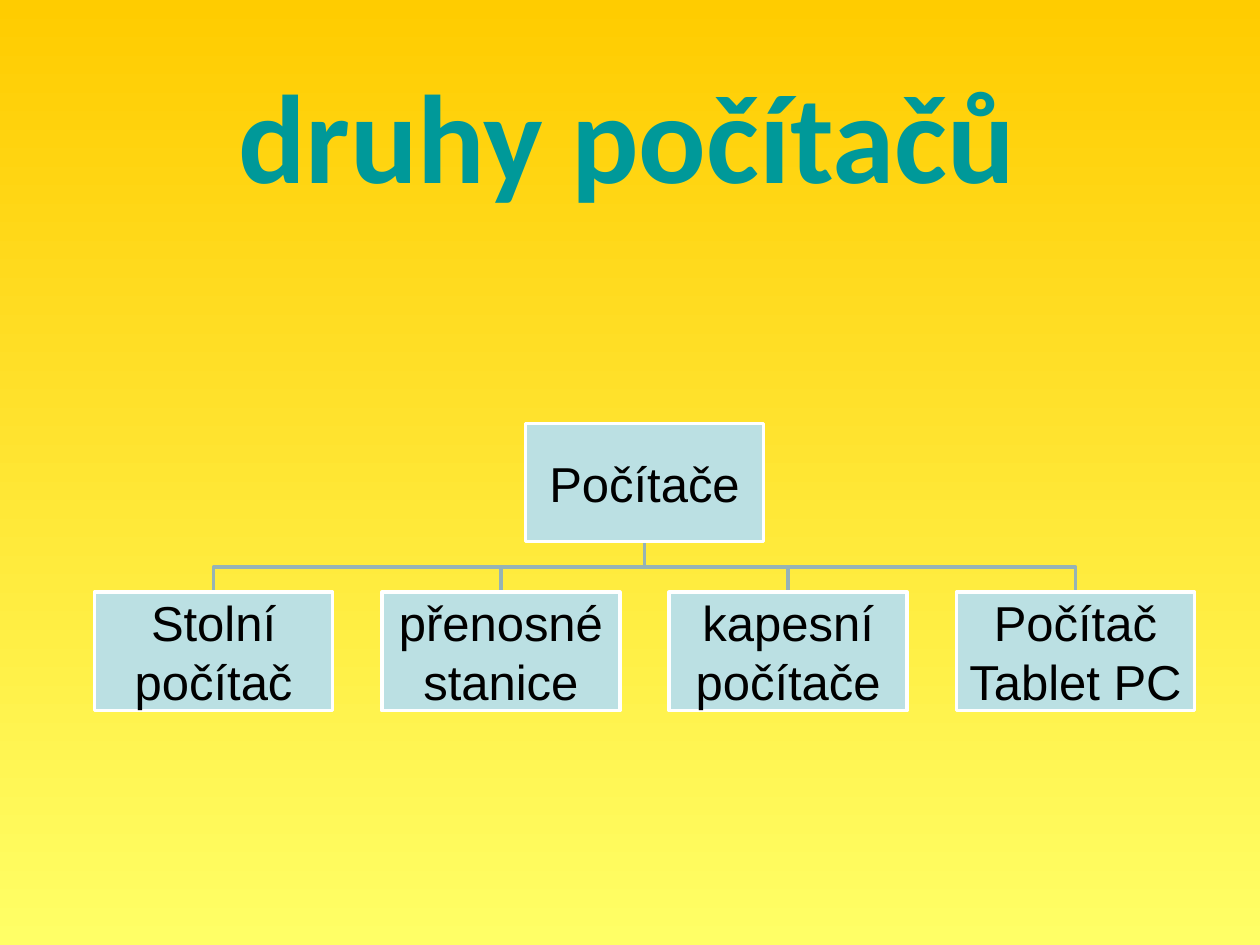
from dataclasses import dataclass

from pptx import Presentation
from pptx.dml.color import RGBColor
from pptx.enum.shapes import MSO_SHAPE
from pptx.enum.text import MSO_ANCHOR, MSO_AUTO_SIZE, PP_ALIGN
from pptx.shapes.autoshape import Shape
from pptx.slide import Slide
from pptx.util import Inches, Pt

RECTANGLE = MSO_SHAPE.RECTANGLE
TOP, MIDDLE = MSO_ANCHOR.TOP, MSO_ANCHOR.MIDDLE
CENTER = PP_ALIGN.CENTER
NO_AUTOFIT = MSO_AUTO_SIZE.NONE

COLORS = {
    "background top": "FFCC00",
    "background bottom": "FFFF66",
    "title": "009999",
    "box": "BBE0E3",
    "box border": "FFFFFF",
    "branch": "96B3B6",
    "text": "000000",
}
BOX_WIDTH, BOX_HEIGHT = 1.89, 0.94
ROOT_TOP, CHILD_TOP = 3.36, 4.7
FIRST_CHILD_LEFT, CHILD_PITCH = 0.75, 2.28
CHILD_LABELS = ["Stolní počítač", "přenosné stanice", "kapesní počítače", "Počítač Tablet PC"]


@dataclass
class Box:
    label: str
    left: float
    top: float

    @property
    def center(self) -> float:
        return self.left + BOX_WIDTH / 2

    @property
    def bottom(self) -> float:
        return self.top + BOX_HEIGHT


def color(name: str) -> RGBColor:
    return RGBColor.from_string(COLORS[name])


def format_text(shape: Shape, font_name: str, size: int, color_name: str, bold: bool = False) -> None:
    paragraph = shape.text_frame.paragraphs[0]
    paragraph.alignment = CENTER
    font = paragraph.runs[0].font
    font.name = font_name
    font.size = Pt(size)
    font.bold = bold
    font.color.rgb = color(color_name)


def set_outline(shape: Shape, color_name: str) -> None:
    shape.shadow.inherit = False
    shape.line.color.rgb = color(color_name)
    shape.line.width = Pt(2)


def paint_background(slide: Slide) -> None:
    fill = slide.background.fill
    fill.gradient()
    fill.gradient_angle = 270
    for stop, name in zip(fill.gradient_stops, ("background top", "background bottom")):
        stop.color.rgb = color(name)


def add_title(slide: Slide) -> None:
    title = slide.shapes.title
    title.left, title.top = Inches(0.51), Inches(0.36)
    title.width, title.height = Inches(8.5), Inches(1.73)
    frame = title.text_frame
    frame.text = "druhy počítačů"
    frame.auto_size = NO_AUTOFIT
    frame.vertical_anchor = TOP
    frame.margin_left = Inches(0.53)
    frame.margin_top = Inches(0.1)
    format_text(title, "Calibri", 72, "title", bold=True)


def add_branch(slide: Slide, parent: Box, child: Box) -> None:
    """Draw the angled line from the parent's bottom to the child's top."""
    middle = (parent.bottom + child.top) / 2
    builder = slide.shapes.build_freeform(Inches(parent.center), Inches(parent.bottom))
    corners = [(parent.center, middle), (child.center, middle), (child.center, child.top)]
    builder.add_line_segments([(Inches(x), Inches(y)) for x, y in corners], close=False)
    branch = builder.convert_to_shape()
    branch.fill.background()
    set_outline(branch, "branch")


def add_box(slide: Slide, box: Box) -> None:
    shape = slide.shapes.add_shape(
        RECTANGLE, Inches(box.left), Inches(box.top), Inches(BOX_WIDTH), Inches(BOX_HEIGHT)
    )
    shape.fill.solid()
    shape.fill.fore_color.rgb = color("box")
    set_outline(shape, "box border")
    frame = shape.text_frame
    frame.text = box.label
    frame.word_wrap = True
    frame.vertical_anchor = MIDDLE
    frame.margin_left = frame.margin_right = Inches(0.02)
    frame.margin_top = frame.margin_bottom = Inches(0.02)
    format_text(shape, "Arial", 28, "text")


def main() -> None:
    presentation = Presentation()
    presentation.slide_width, presentation.slide_height = Inches(10), Inches(7.5)
    slide = presentation.slides.add_slide(presentation.slide_layouts.get_by_name("Title Only"))
    paint_background(slide)
    add_title(slide)

    children = [
        Box(label, FIRST_CHILD_LEFT + index * CHILD_PITCH, CHILD_TOP)
        for index, label in enumerate(CHILD_LABELS)
    ]
    root = Box("Počítače", (children[0].left + children[-1].left) / 2, ROOT_TOP)
    for child in reversed(children):
        add_branch(slide, root, child)
    for box in [root, *children]:
        add_box(slide, box)

    presentation.save("out.pptx")


if __name__ == "__main__":
    main()
